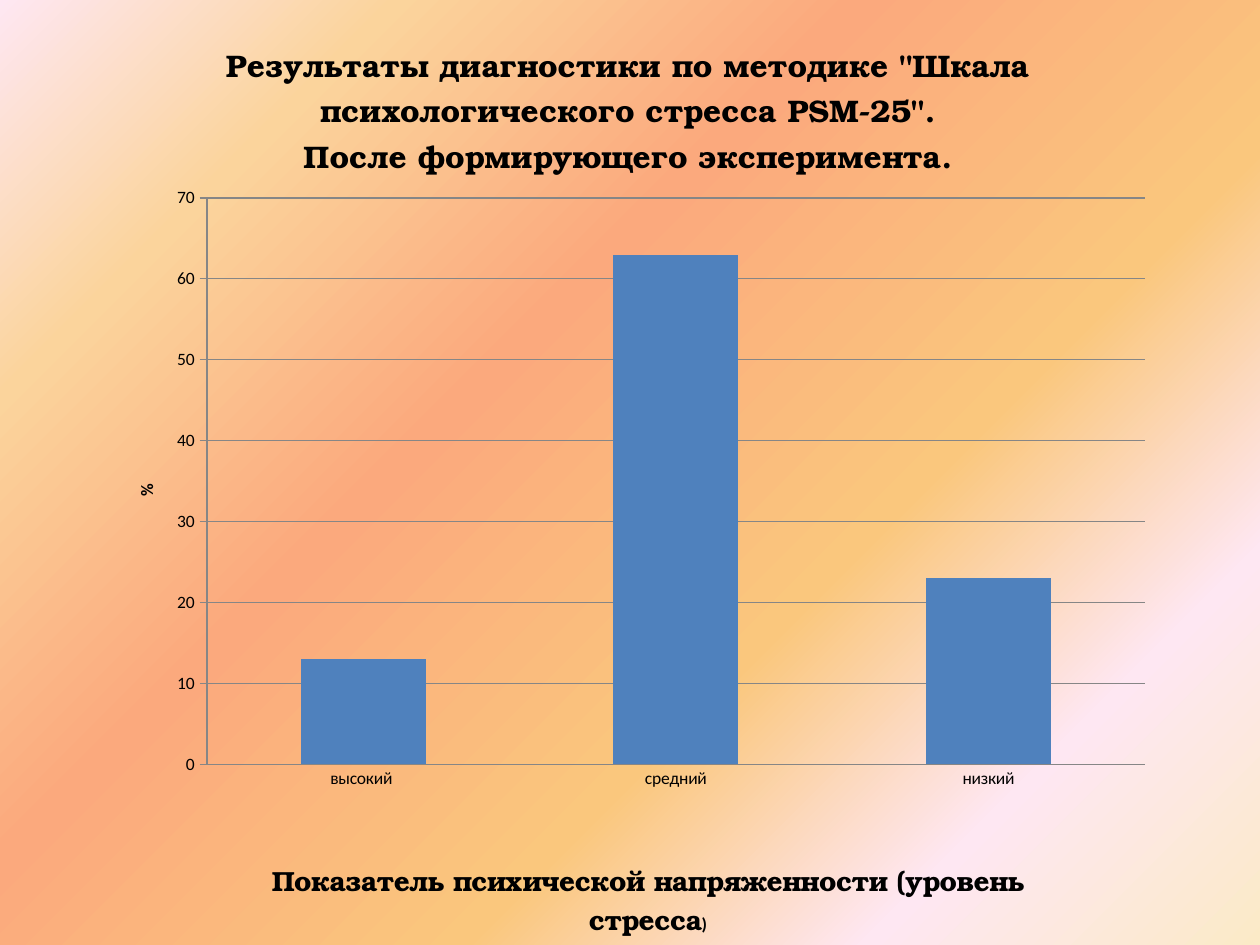
from dataclasses import dataclass

from pptx import Presentation
from pptx.chart.data import CategoryChartData
from pptx.dml.color import RGBColor
from pptx.enum.chart import XL_CHART_TYPE, XL_TICK_MARK
from pptx.oxml import parse_xml
from pptx.oxml.ns import nsdecls, qn
from pptx.util import Emu, Pt

SLIDE_W, SLIDE_H = 1260, 945
EMU_PER_PX = 914400 // 126
CHART_BOX = (105, 0, 1062, 945)


@dataclass(frozen=True)
class Theme:
    text: str = "000000"
    bars: str = "4F81BD"
    lines: str = "868686"
    background: tuple = (
        (0, "FBEAC7"), (18, "FEE7F2"), (36, "FAC77D"),
        (61, "FBA97D"), (82, "FBD49C"), (100, "FEE7F2"),
    )
    body_font: str = "Calibri"
    heading_font: str = "TeX Gyre Bonum"
    label_size: int = 10
    axis_title_size: int = 16
    title_size: int = 18


THEME = Theme()


def px(length):
    return Emu(length * EMU_PER_PX)


def style_font(font, name, size, bold=False):
    font.name = name
    font.size = Pt(size)
    font.bold = bold
    font.color.rgb = RGBColor.from_string(THEME.text)


def paint_background(slide):
    """Fill the slide with a gradient spreading from the bottom right corner."""
    slide.background.fill.gradient()
    stops = "".join(
        f'<a:gs pos="{percent * 1000}"><a:srgbClr val="{color}"/></a:gs>'
        for percent, color in THEME.background
    )
    corner_gradient = parse_xml(
        f'<a:gradFill {nsdecls("a")} rotWithShape="1"><a:gsLst>{stops}</a:gsLst>'
        '<a:path path="circle"><a:fillToRect l="100000" t="100000"/></a:path>'
        "</a:gradFill>"
    )
    default_gradient = slide.element.find(".//" + qn("a:gradFill"))
    default_gradient.getparent().replace(default_gradient, corner_gradient)


def place(layout, left, top, width=None, height=None):
    """Fix a chart part at slide pixels, as fractions of the chart box."""
    box_left, box_top, box_width, box_height = CHART_BOX
    fractions = {"x": (left - box_left) / box_width, "y": (top - box_top) / box_height}
    target = ""
    if width is not None:
        fractions.update(w=width / box_width, h=height / box_height)
        target = '<c:layoutTarget val="inner"/>'
    modes = '<c:xMode val="edge"/><c:yMode val="edge"/>'
    values = "".join(f'<c:{key} val="{value:.4f}"/>' for key, value in fractions.items())
    layout.append(parse_xml(
        f'<c:manualLayout {nsdecls("c")}>{target}{modes}{values}</c:manualLayout>'
    ))


def layout_of(part, position):
    layout = part.find(qn("c:layout"))
    if layout is None:
        layout = parse_xml(f'<c:layout {nsdecls("c")}/>')
        part.insert(position, layout)
    return layout


def write_title(title, lines, font_name, size, left, top):
    frame = title.text_frame
    frame.text = "\n".join(lines)
    for paragraph in frame.paragraphs:
        style_font(paragraph.font, font_name, size, bold=True)
        for run in paragraph.runs:
            style_font(run.font, font_name, size, bold=True)
    place(layout_of(title._element, 1), left, top)
    return frame


def style_axis(axis, tick_mark):
    axis.major_tick_mark = tick_mark
    axis.minor_tick_mark = XL_TICK_MARK.NONE
    style_font(axis.tick_labels.font, THEME.body_font, THEME.label_size)
    style_line(axis.format.line)


def style_line(line):
    line.color.rgb = RGBColor.from_string(THEME.lines)
    line.width = Pt(0.75)


def add_stress_chart(slide):
    stress = CategoryChartData()
    stress.categories = ["высокий ", "средний", "низкий"]
    stress.add_series("Series 1", (13, 63, 23))
    chart = slide.shapes.add_chart(
        XL_CHART_TYPE.COLUMN_CLUSTERED, *map(px, CHART_BOX), stress
    ).chart
    chart.has_legend = False
    style_font(chart.font, THEME.body_font, THEME.label_size)

    columns = chart.plots[0]
    columns.gap_width = 150
    columns.vary_by_categories = False
    fill = columns.series[0].format.fill
    fill.solid()
    fill.fore_color.rgb = RGBColor.from_string(THEME.bars)
    plot_area = chart._chartSpace.find(".//" + qn("c:plotArea"))
    place(layout_of(plot_area, 0), 207, 200, 938, 572)

    levels, percent = chart.category_axis, chart.value_axis
    style_axis(levels, XL_TICK_MARK.NONE)
    style_axis(percent, XL_TICK_MARK.CROSS)
    percent.minimum_scale, percent.maximum_scale, percent.major_unit = 0, 70, 10
    percent.has_major_gridlines = True
    style_line(percent.major_gridlines.format.line)
    return chart


def add_titles(chart):
    write_title(
        chart.chart_title,
        ['Результаты диагностики по методике "Шкала психологического стресса PSM-25".',
         "После формирующего эксперимента."],
        THEME.heading_font, THEME.title_size, 222, 35,
    )
    level_title = write_title(
        chart.category_axis.axis_title,
        ["Показатель психической напряженности (уровень стресса"],
        THEME.heading_font, THEME.axis_title_size, 268, 863,
    )
    closing_bracket = level_title.paragraphs[0].add_run()
    closing_bracket.text = ")"
    style_font(closing_bracket.font, THEME.body_font, THEME.label_size, bold=True)
    percent_title = write_title(
        chart.value_axis.axis_title, ["%"],
        THEME.body_font, THEME.label_size, 132, 486,
    )
    body = percent_title._txBody.find(qn("a:bodyPr"))
    body.set("rot", "-5400000")
    body.set("vert", "horz")


def main():
    presentation = Presentation()
    presentation.slide_width, presentation.slide_height = px(SLIDE_W), px(SLIDE_H)
    slide = presentation.slides.add_slide(presentation.slide_layouts[6])
    paint_background(slide)
    add_titles(add_stress_chart(slide))
    presentation.save("out.pptx")


if __name__ == "__main__":
    main()
